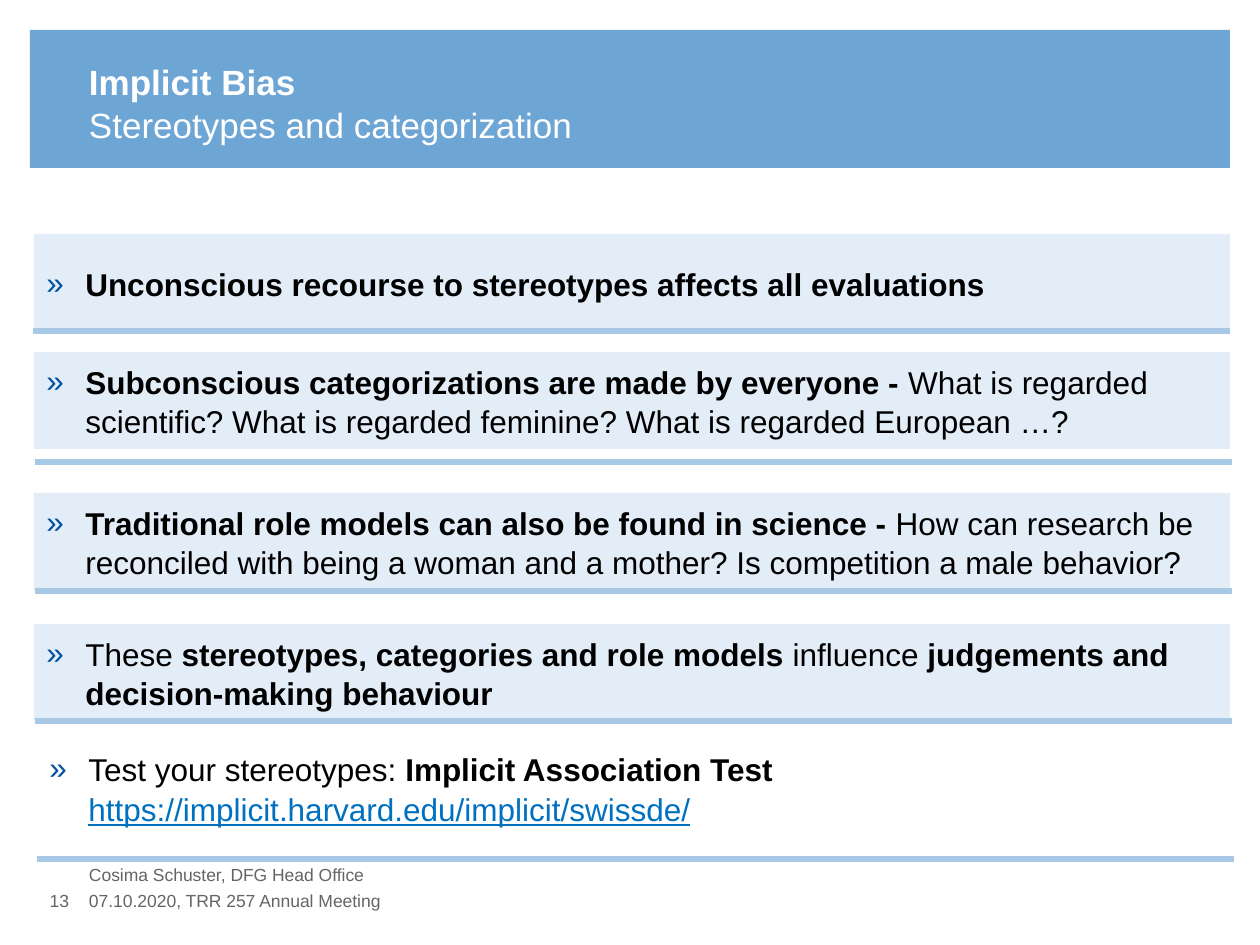
"""Builds the slide on implicit bias and stereotypes."""
from lxml import etree
from pptx import Presentation
from pptx.dml.color import RGBColor
from pptx.enum.shapes import MSO_CONNECTOR, MSO_SHAPE
from pptx.enum.text import MSO_ANCHOR, PP_ALIGN
from pptx.oxml.ns import qn
from pptx.util import Emu, Pt

RECTANGLE = MSO_SHAPE.RECTANGLE
STRAIGHT = MSO_CONNECTOR.STRAIGHT
MIDDLE, TOP = MSO_ANCHOR.MIDDLE, MSO_ANCHOR.TOP
LEFT, RIGHT = PP_ALIGN.LEFT, PP_ALIGN.RIGHT

FONT = "Arial"
BLUE, PALE, RULE, BULLET = "6DA5D5", "E2EDF7", "A7C9E6", "00519E"
WHITE, BLACK, GREY, LINK = "FFFFFF", "000000", "646567", "0070C0"
STATEMENT_LEFT, STATEMENT_WIDTH, STATEMENT_HEIGHT = 34, 1196, 97
STATEMENTS = [
    (234, [("Unconscious recourse to stereotypes affects all evaluations", True)]),
    (352, [("Subconscious categorizations are made by everyone - ", True),
           ("What is regarded scientific? What is regarded feminine? "
            "What is regarded European …?", False)]),
    (493, [("Traditional role models can also be found in science - ", True),
           ("How can research be reconciled with being a woman and a mother? "
            "Is competition a male behavior?", False)]),
    (624, [("These ", False),
           ("stereotypes, categories and role models", True),
           (" influence", False),
           (" judgements and decision-making behaviour", True)]),
]
RULES = [(33, 331), (35, 462), (35, 591), (35, 721), (37, 859)]
RULE_LENGTH = 1197


def px(value):
    return Emu(round(value * 914400 / 126))


def color(value):
    return RGBColor.from_string(value)


class SlideBuilder:
    """Holds the text style and the current page."""

    def __init__(self, page):
        self.page = page
        self.line_spacing = 1.05
        self.indent = 39

    def bar(self, left, top, width, height, fill):
        box = self.page.shapes.add_shape(
            RECTANGLE, px(left), px(top), px(width), px(height))
        box.shadow.inherit = False
        box.fill.solid()
        box.fill.fore_color.rgb = color(fill)
        box.line.fill.background()
        box.text_frame.vertical_anchor = MIDDLE
        return box

    def text_box(self, left, top, width, height):
        box = self.page.shapes.add_textbox(px(left), px(top), px(width), px(height))
        box.text_frame.word_wrap = True
        box.text_frame.vertical_anchor = TOP
        return box

    def label(self, left, top, width, height, text, size, fill, bold=False, align=LEFT):
        frame = self.text_box(left, top, width, height).text_frame
        frame.margin_left = frame.margin_right = 0
        frame.margin_top = frame.margin_bottom = 0
        frame.text = text
        para = frame.paragraphs[0]
        para.alignment = align
        para.line_spacing = self.line_spacing
        self.style(para.runs[0], size, fill, bold)

    def bullet(self, box, parts):
        para = box.text_frame.paragraphs[0]
        para.alignment = LEFT
        para.line_spacing = self.line_spacing
        properties = para._p.get_or_add_pPr()
        properties.set("marL", str(px(self.indent)))
        properties.set("indent", str(px(-self.indent)))
        bullet_color = etree.SubElement(properties, qn("a:buClr"))
        etree.SubElement(bullet_color, qn("a:srgbClr"), val=BULLET)
        etree.SubElement(properties, qn("a:buFont"), typeface=FONT)
        etree.SubElement(properties, qn("a:buChar"), char="»")
        for text, bold in parts:
            span = para.add_run()
            span.text = text
            self.style(span, 18, BLACK, bold)
        return para

    def style(self, span, size, fill, bold):
        span.font.name = FONT
        span.font.size = Pt(size)
        span.font.bold = bold
        span.font.color.rgb = color(fill)

    def rule(self, left, top, length):
        line = self.page.shapes.add_connector(
            STRAIGHT, px(left), px(top), px(left + length), px(top))
        line.line.color.rgb = color(RULE)
        line.line.width = Pt(3)
        etree.SubElement(line._element.spPr, qn("a:effectLst"))


def main():
    deck = Presentation()
    deck.slide_width, deck.slide_height = px(1260), px(945)
    builder = SlideBuilder(deck.slides.add_slide(deck.slide_layouts[6]))

    builder.bar(30, 30, 1200, 138, BLUE)
    builder.label(89, 58, 1091, 38, "Implicit Bias", 20, WHITE, bold=True)
    builder.label(89, 101, 1091, 38, "Stereotypes and categorization", 20, WHITE)

    for top, parts in STATEMENTS:
        box = builder.bar(STATEMENT_LEFT, top, STATEMENT_WIDTH, STATEMENT_HEIGHT, PALE)
        builder.bullet(box, parts)
    for left, top in RULES:
        builder.rule(left, top, RULE_LENGTH)

    test_box = builder.text_box(37, 742, 1193, 89)
    para = builder.bullet(test_box, [
        ("Test your stereotypes: ", False),
        ("Implicit Association Test ", True),
        ("https://implicit.harvard.edu/implicit/swissde/", False)])
    address = para.runs[-1]
    address.font.color.rgb = color(LINK)
    address.font.underline = True

    builder.label(15, 889, 54, 34, "13", 10, GREY, align=RIGHT)
    builder.label(89, 889, 876, 34, "07.10.2020, TRR 257 Annual Meeting", 10, GREY)
    builder.label(89, 863, 876, 28, "Cosima Schuster, DFG Head Office", 10, GREY)
    deck.save("out.pptx")


if __name__ == "__main__":
    main()
